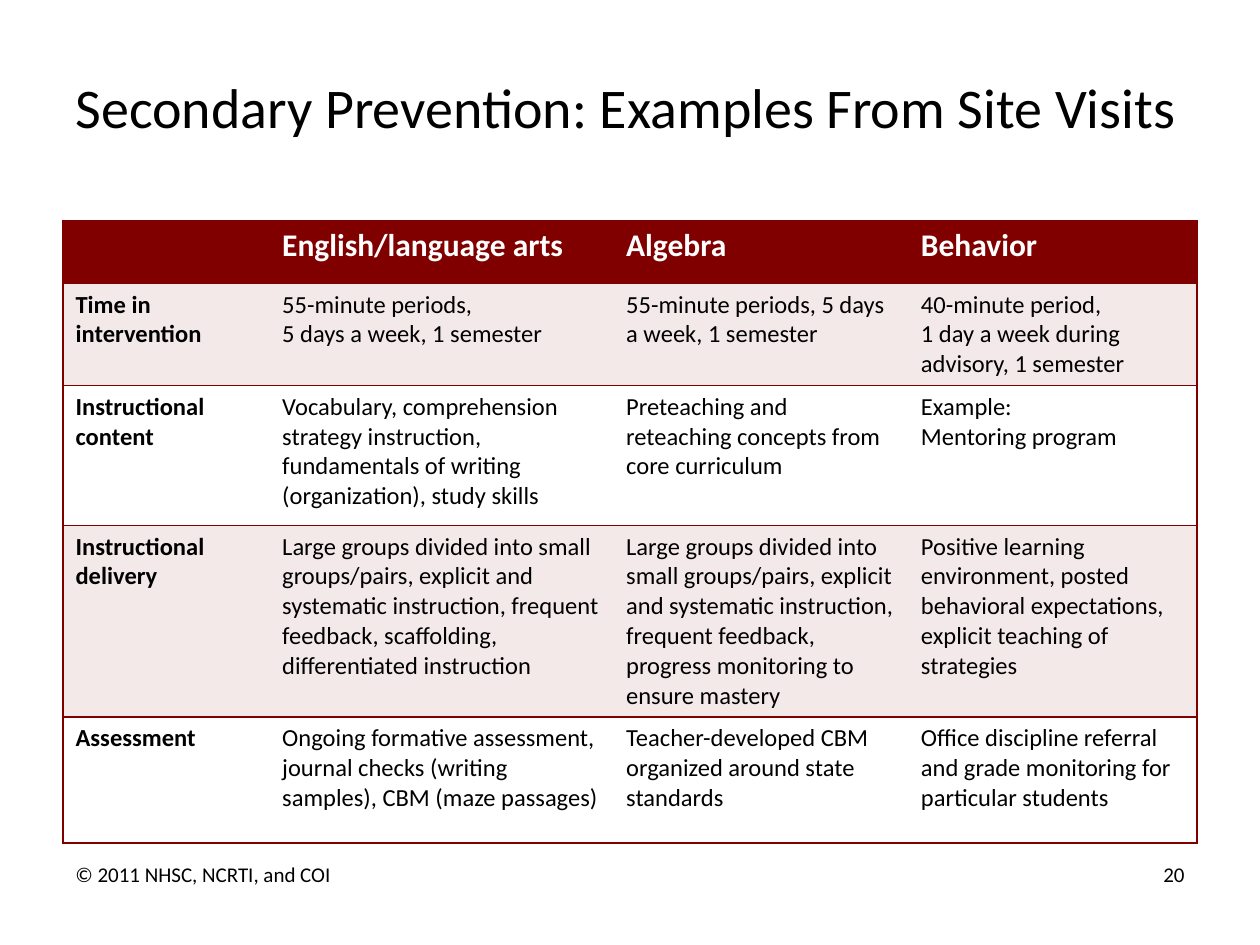
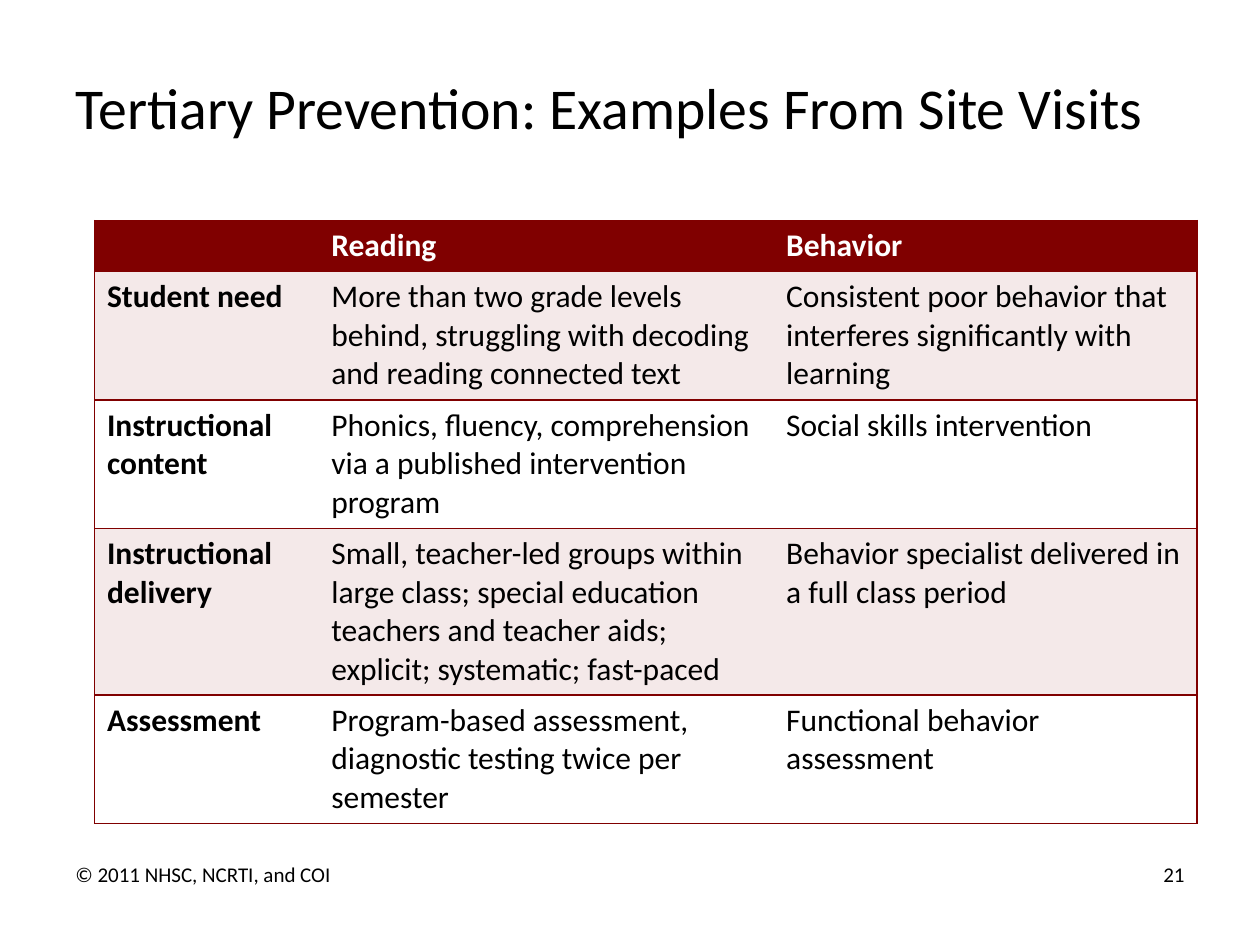
import pptx
import pptx.dml.color
import pptx.enum.text
import pptx.util
from dataclasses import dataclass
from lxml import etree

PX = 9144  # EMU per px, 100 px to the inch
A = "{http://schemas.openxmlformats.org/drawingml/2006/main}"
NO_STYLE = "{2D5ABB26-0587-4C30-8999-92F81FD0307C}"


@dataclass(frozen=True)
class Theme:
    font: str = "Calibri"
    maroon: str = "800000"
    tint: str = "F4E9E9"
    white: str = "FFFFFF"
    black: str = "000000"
    header_size: int = 18
    footer_size: int = 12


theme = Theme()
PP_ALIGN = pptx.enum.text.PP_ALIGN
MIDDLE = pptx.enum.text.MSO_ANCHOR.MIDDLE


def write(tf, text, size, color=theme.black, bold=False, align=PP_ALIGN.LEFT):
    """Fill the first paragraph, turning each newline into a line break."""
    p = tf.paragraphs[0]
    p.alignment = align
    for i, line in enumerate(text.split("\n")):
        if i:
            p.add_line_break()
        r = p.add_run()
        r.text = line
        r.font.name = theme.font
        r.font.size = pptx.util.Pt(size)
        r.font.bold = bold
        r.font.color.rgb = pptx.dml.color.RGBColor.from_string(color)


def add_border(cell, side):
    ln = etree.SubElement(cell._tc.get_or_add_tcPr(), A + "ln" + side, w="12700")
    fill = etree.SubElement(ln, A + "solidFill")
    etree.SubElement(fill, A + "srgbClr", val=theme.maroon)


slides = [
    dict(
        title="Secondary Prevention: Examples From Site Visits",
        title_size=32, body_size=14, left=50, number=20,
        cols=[164, 273, 234, 229],
        rows=[50, 81, 111, 152, 100],
        cells=[
            ["", "English/language arts", "Algebra", "Behavior"],
            ["Time in intervention",
             "55-minute periods, \n5 days a week, 1 semester",
             "55-minute periods, 5 days a week, 1 semester",
             "40-minute period, \n1 day a week during advisory, 1 semester"],
            ["Instructional content",
             "Vocabulary, comprehension strategy instruction, fundamentals of "
             "writing (organization), study skills",
             "Preteaching and reteaching concepts from core curriculum",
             "Example: \nMentoring program"],
            ["Instructional delivery",
             "Large groups divided into small groups/pairs, explicit and systematic "
             "instruction, frequent feedback, scaffolding, differentiated instruction",
             "Large groups divided into small groups/pairs, explicit and systematic "
             "instruction, frequent feedback, progress monitoring to ensure mastery",
             "Positive learning environment, posted behavioral expectations, "
             "explicit teaching of strategies"],
            ["Assessment",
             "Ongoing formative assessment, journal checks (writing samples), "
             "CBM (maze passages)",
             "Teacher-developed CBM organized around state standards",
             "Office discipline referral and grade monitoring for particular students"],
        ],
    ),
    dict(
        title="Tertiary Prevention: Examples From Site Visits",
        title_size=33, body_size=18, left=75, number=21,
        cols=[178, 361, 336],
        rows=[40, 102, 102, 132, 102],
        cells=[
            ["", "Reading", "Behavior"],
            ["Student need",
             "More than two grade levels behind, struggling with decoding and "
             "reading connected text",
             "Consistent poor behavior that interferes significantly with learning"],
            ["Instructional content",
             "Phonics, fluency, comprehension via a published intervention program",
             "Social skills intervention"],
            ["Instructional delivery",
             "Small, teacher-led groups within large class; special education "
             "teachers and teacher aids; explicit; systematic; fast-paced",
             "Behavior specialist delivered in a full class period"],
            ["Assessment",
             "Program-based assessment, diagnostic testing twice per semester",
             "Functional behavior assessment"],
        ],
    ),
]

prs = pptx.Presentation()
prs.slide_width, prs.slide_height = 1000 * PX, 750 * PX

for content in slides:
    s = prs.slides.add_slide(prs.slide_layouts[5])

    title = s.shapes.title
    title.left, title.top, title.width, title.height = (v * PX for v in (50, 30, 900, 109))
    title.text_frame.vertical_anchor = MIDDLE
    title.text_frame.auto_size = pptx.enum.text.MSO_AUTO_SIZE.NONE
    write(title.text_frame, content["title"], content["title_size"])

    cols, rows = content["cols"], content["rows"]
    frame = s.shapes.add_table(len(rows), len(cols), content["left"] * PX, 175 * PX,
                               sum(cols) * PX, sum(rows) * PX)
    table = frame.table
    table._tbl.tblPr.find(A + "tableStyleId").text = NO_STYLE
    for column, width in zip(table.columns, cols):
        column.width = width * PX
    for row, height in zip(table.rows, rows):
        row.height = height * PX

    for i, texts in enumerate(content["cells"]):
        header = i == 0
        fill = theme.maroon if header else theme.tint if i % 2 else theme.white
        for j, text in enumerate(texts):
            cell = table.cell(i, j)
            if j == 0:
                add_border(cell, "L")
            if j == len(cols) - 1:
                add_border(cell, "R")
            add_border(cell, "T")
            add_border(cell, "B")
            cell.fill.solid()
            cell.fill.fore_color.rgb = pptx.dml.color.RGBColor.from_string(fill)
            if text:
                write(cell.text_frame, text,
                      theme.header_size if header else content["body_size"],
                      theme.white if header else theme.black,
                      bold=header or j == 0)

    for text, left, width, align in [
        (str(content["number"]), 717, 233, PP_ALIGN.RIGHT),
        ("© 2011 NHSC, NCRTI, and COI", 50, 317, PP_ALIGN.LEFT),
    ]:
        sp = s.shapes.add_textbox(left * PX, 674 * PX, width * PX, 40 * PX)
        sp.text_frame.word_wrap = True
        sp.text_frame.vertical_anchor = MIDDLE
        write(sp.text_frame, text, theme.footer_size, align=align)

prs.save("out.pptx")
